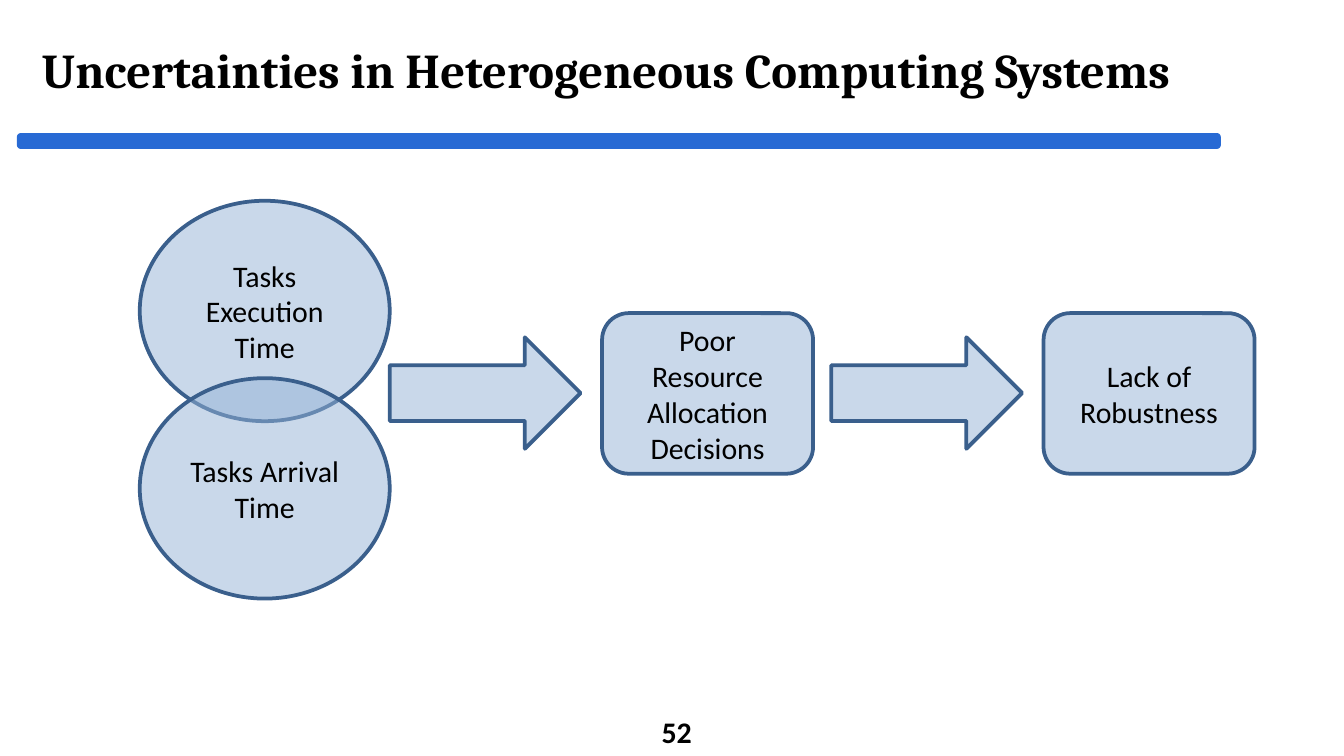
import lxml.etree
import pptx
import pptx.dml.color
import pptx.enum.shapes
import pptx.enum.text
import pptx.oxml.ns
import pptx.util

RGBColor = pptx.dml.color.RGBColor
Shape = pptx.enum.shapes.MSO_SHAPE
Align = pptx.enum.text.PP_ALIGN

BLACK = RGBColor(0x00, 0x00, 0x00)
BAR_BLUE = RGBColor(0x28, 0x6A, 0xD4)
PALE_BLUE = RGBColor(0x95, 0xB3, 0xD7)
OUTLINE_BLUE = RGBColor(0x3A, 0x5F, 0x8C)

# Widescreen slide, 16 by 9
presentation = pptx.Presentation()
presentation.slide_width = pptx.util.Inches(10)
presentation.slide_height = presentation.slide_width * 9 // 16
slide = presentation.slides.add_slide(presentation.slide_layouts[5])

# Square grid: 100 columns across the slide, about 56 rows down
CELL = presentation.slide_width / 100


def add_block(kind, box, fill, line):
    shape = slide.shapes.add_shape(kind, *[round(CELL * n) for n in box])
    shape.shadow.inherit = False
    shape.fill.solid()
    shape.fill.fore_color.rgb = fill
    shape.line.color.rgb = line
    shape.line.width = pptx.util.Pt(2)
    return shape


def write_text(shape, text, size, font, alignment, bold=False):
    frame = shape.text_frame
    frame.word_wrap = True
    frame.auto_size = pptx.enum.text.MSO_AUTO_SIZE.NONE
    frame.vertical_anchor = pptx.enum.text.MSO_ANCHOR.MIDDLE
    paragraph = frame.paragraphs[0]
    paragraph.alignment = alignment
    run = paragraph.add_run()
    run.text = text
    run.font.size = pptx.util.Pt(size)
    run.font.name = font
    run.font.bold = bold
    run.font.color.rgb = BLACK


# Title and the bar under it
title = slide.shapes.title
title.left, title.top, title.width, title.height = [
    round(CELL * n) for n in (2.1, 1, 89, 8.3)]
write_text(title, "Uncertainties in Heterogeneous Computing Systems",
           26, "Cambria", Align.LEFT, bold=True)
add_block(Shape.ROUNDED_RECTANGLE, (1.4, 10.04, 89.3, 0.9), BAR_BLUE, BAR_BLUE)

# Slide number
number = slide.shapes.add_textbox(
    *[round(CELL * n) for n in (38.7, 52.95, 23.3, 3)])
write_text(number, "52", 16, "Calibri", Align.CENTER, bold=True)

# Flow: two overlapping causes, then an arrow and a box for each effect
blocks = []
for index, cause in enumerate(["Tasks Execution Time", "Tasks Arrival Time"]):
    blocks.append((Shape.OVAL, (10.4, 14.94 + 13.2 * index, 18.6, 16.4), cause))
for index, effect in enumerate(["Poor Resource Allocation Decisions",
                                "Lack of Robustness"]):
    left = 29 + 32.85 * index
    blocks.append((Shape.RIGHT_ARROW, (left, 25.1, 14.2, 8.3), ""))
    blocks.append((Shape.ROUNDED_RECTANGLE, (left + 15.8, 23.3, 15.7, 11.95), effect))

for kind, box, label in blocks:
    block = add_block(kind, box, PALE_BLUE, OUTLINE_BLUE)
    # Half-transparent fill lets the overlap show
    color = block.fill._xPr.find(".//" + pptx.oxml.ns.qn("a:srgbClr"))
    lxml.etree.SubElement(color, pptx.oxml.ns.qn("a:alpha"), val="50000")
    if label:
        write_text(block, label, 16, "Calibri", Align.CENTER)

presentation.save("out.pptx")
